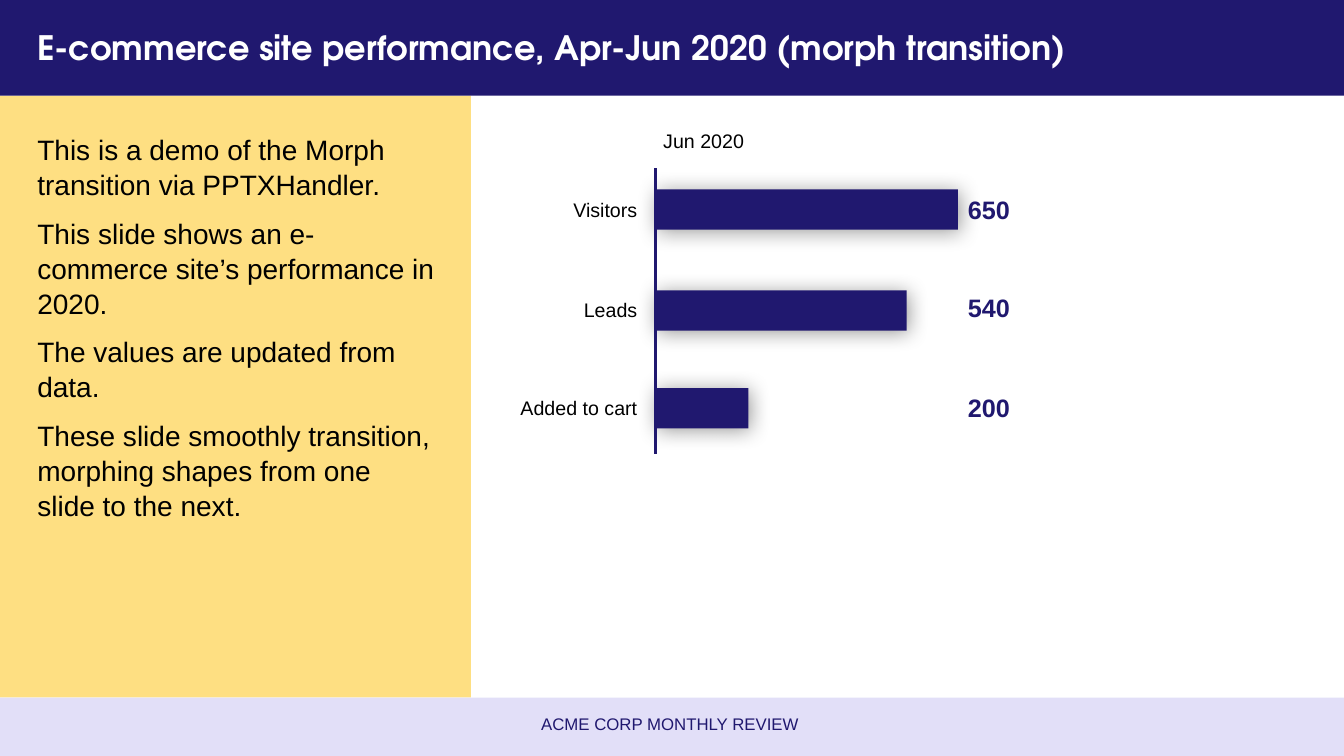
from lxml import etree
from pptx import Presentation
from pptx.dml.color import RGBColor
from pptx.enum import shapes, text
from pptx.oxml import ns
from pptx.util import Inches, Pt

NAVY = RGBColor(0x20, 0x18, 0x6F)
AMBER = RGBColor(0xFE, 0xC1, 0x07)
LILAC = RGBColor(0xC6, 0xC1, 0xF2)
WHITE = RGBColor(0xFF, 0xFF, 0xFF)
BLACK = RGBColor(0, 0, 0)

TITLE = "E-commerce site performance, Apr-Jun 2020 (morph transition)"
COMMENTARY = [
    "This is a demo of the Morph transition via PPTXHandler.",
    "This slide shows an e-commerce site’s performance in 2020.",
    "The values are updated from data.",
    "These slide smoothly transition, morphing shapes from one slide to the next.",
]
FOOTER = "ACME CORP MONTHLY REVIEW"
MONTH = "Jun 2020"
PANELS = [
    ((0, 0.95, 4.67, 5.97), AMBER, 50),
    ((0, 6.92, 13.33, 0.6), LILAC, 50),
    ((0, 0, 13.33, 0.95), NAVY, 100),
]
# label, value, bar top, value top
FUNNEL = [
    ("Visitors", 650, 1.88, 1.88),
    ("Leads", 540, 2.88, 2.85),
    ("Added to cart", 200, 3.85, 3.84),
]
AXIS_X, AXIS_TOP, AXIS_BOTTOM = 6.5, 1.67, 4.5
LONGEST_BAR, BAR_HEIGHT = 3, 0.4


def add_xml(parent, tag, **attributes):
    """Append a drawing element and return it."""
    return etree.SubElement(parent, ns.qn(tag), attributes)


def add_block(slide, box, color, opacity=100):
    """Draw a borderless filled rectangle."""
    block = slide.shapes.add_shape(shapes.MSO_SHAPE.RECTANGLE, *map(Inches, box))
    block.shadow.inherit = False
    block.fill.solid()
    block.fill.fore_color.rgb = color
    block.line.fill.background()
    if opacity < 100:
        tint = block.element.spPr.find(".//" + ns.qn("a:srgbClr"))
        add_xml(tint, "a:alpha", val=str(opacity * 1000))
    return block


def add_glow_shadow(bar):
    """Give a bar its soft shadow."""
    effects = bar.element.spPr.find(ns.qn("a:effectLst"))
    shadow = add_xml(effects, "a:outerShdw", blurRad=str(Pt(15)), dist=str(Pt(2)),
                     dir=str(45 * 60000), algn="tl", rotWithShape="0")
    shade = add_xml(shadow, "a:srgbClr", val=str(BLACK))
    add_xml(shade, "a:alpha", val="40000")


def write(holder, lines, size=14, color=BLACK, bold=False, font="Arial",
          align=text.PP_ALIGN.LEFT, anchor=text.MSO_ANCHOR.TOP, wrap=True,
          fit=text.MSO_AUTO_SIZE.NONE, before=0, spacing=1.0):
    """Fill a shape with formatted paragraphs."""
    frame = holder.text_frame
    frame.text = "\n".join(lines)
    frame.word_wrap = wrap
    frame.auto_size = fit
    frame.vertical_anchor = anchor
    for paragraph in frame.paragraphs:
        paragraph.alignment = align
        paragraph.space_before = Pt(before)
        paragraph.line_spacing = spacing
        for run in paragraph.runs:
            run.font.size = Pt(size)
            run.font.name = font
            run.font.bold = bold
            run.font.color.rgb = color


def add_text(slide, box, line, **style):
    """Add a text box holding one line."""
    write(slide.shapes.add_textbox(*map(Inches, box)), [line], **style)


def place(holder, box):
    """Move and size a placeholder."""
    holder.left, holder.top, holder.width, holder.height = map(Inches, box)


def main():
    """Build and save the performance slide."""
    deck = Presentation()
    deck.slide_width, deck.slide_height = Inches(13.33), Inches(7.5)
    slide = deck.slides.add_slide(deck.slide_layouts[1])
    title, commentary = slide.shapes.title, slide.placeholders[1]

    for box, color, opacity in PANELS:
        title.element.addprevious(add_block(slide, box, color, opacity).element)

    place(title, (0.27, 0.12, 12.8, 0.7))
    write(title, [TITLE], size=24, color=WHITE, bold=True,
          font="TeX Gyre Adventor", anchor=text.MSO_ANCHOR.MIDDLE)
    place(commentary, (0.27, 1.25, 4.15, 5.6))
    write(commentary, COMMENTARY, size=20, before=10, spacing=1.04)
    for paragraph in commentary.text_frame.paragraphs:
        properties = paragraph._p.get_or_add_pPr()
        properties.set("marL", "0")
        properties.set("indent", "0")
        add_xml(properties, "a:buNone")
    add_text(slide, (2.04, 6.98, 9.21, 0.4), FOOTER, size=12, color=NAVY,
             align=text.PP_ALIGN.CENTER, anchor=text.MSO_ANCHOR.MIDDLE)

    grow = text.MSO_AUTO_SIZE.SHAPE_TO_FIT_TEXT
    add_text(slide, (6.48, 1.23, 1.97, 0.34), MONTH, fit=grow)
    largest = max(value for _, value, _, _ in FUNNEL)
    for label, value, bar_top, value_top in FUNNEL:
        length = LONGEST_BAR * value / largest
        add_glow_shadow(add_block(slide, (AXIS_X, bar_top, length, BAR_HEIGHT), NAVY))
        add_text(slide, (4.92, bar_top + 0.03, 1.5, 0.34), label,
                 align=text.PP_ALIGN.RIGHT, fit=grow)
        add_text(slide, (AXIS_X + LONGEST_BAR, value_top, 0.71, 0.4), str(value),
                 size=18, color=NAVY, bold=True, wrap=False, fit=grow)

    axis = slide.shapes.add_connector(
        shapes.MSO_CONNECTOR.STRAIGHT, Inches(AXIS_X), Inches(AXIS_TOP),
        Inches(AXIS_X), Inches(AXIS_BOTTOM))
    axis.line.color.rgb = NAVY
    axis.line.width = Pt(2)
    add_xml(axis.element.spPr, "a:effectLst")

    deck.save("out.pptx")


if __name__ == "__main__":
    main()
